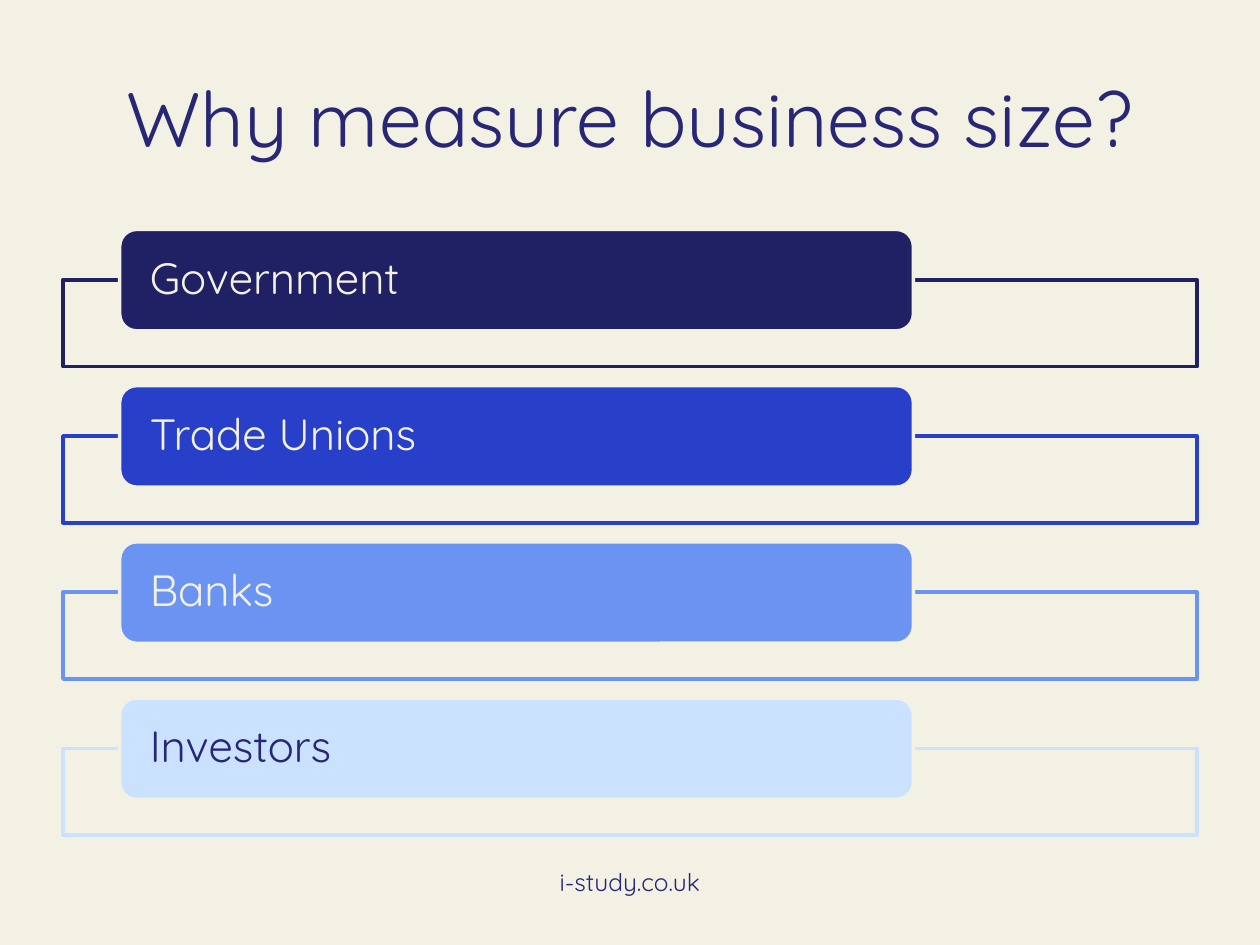
from typing import NamedTuple

from pptx import Presentation
from pptx.dml.color import RGBColor
from pptx.enum import shapes, text
from pptx.util import Pt

CREAM = RGBColor(0xF3, 0xF1, 0xE4)
INDIGO = RGBColor(0x27, 0x27, 0x76)
NAVY = RGBColor(0x20, 0x20, 0x64)
ROYAL = RGBColor(0x27, 0x3F, 0xC9)
CORNFLOWER = RGBColor(0x6B, 0x94, 0xF2)
PALE_BLUE = RGBColor(0xCA, 0xE2, 0xFF)

FONT = "Quicksand"
FIRST_LABEL_TOP = 131.1
ROW_PITCH = 89.26
FRAME_DROP = 28.8


class Reason(NamedTuple):
    name: str
    color: RGBColor
    text_color: RGBColor = CREAM


REASONS = [
    Reason("Government", NAVY),
    Reason("Trade Unions", ROYAL),
    Reason("Banks", CORNFLOWER),
    Reason("Investors", PALE_BLUE, INDIGO),
]


def write(box, words: str, *, size: float, color: RGBColor = INDIGO,
          align=text.PP_ALIGN.CENTER, anchor=text.MSO_ANCHOR.MIDDLE,
          side: float = 7.2, edge: float = 3.6, spacing: float = 1.0) -> None:
    frame = box.text_frame
    frame.word_wrap = True
    frame.vertical_anchor = anchor
    frame.margin_left = frame.margin_right = Pt(side)
    frame.margin_top = frame.margin_bottom = Pt(edge)
    para = frame.paragraphs[0]
    para.alignment = align
    para.line_spacing = spacing
    span = para.add_run()
    span.text = words
    span.font.name = FONT
    span.font.size = Pt(size)
    span.font.color.rgb = color


def add_panel(page, kind, left: float, top: float, width: float, height: float,
              *, fill: RGBColor, line: RGBColor):
    panel = page.shapes.add_shape(kind, Pt(left), Pt(top), Pt(width), Pt(height))
    panel.shadow.inherit = False
    panel.fill.solid()
    panel.fill.fore_color.rgb = fill
    panel.line.color.rgb = line
    panel.line.width = Pt(2)
    return panel


def add_reason(page, reason: Reason, top: float) -> None:
    add_panel(page, shapes.MSO_SHAPE.RECTANGLE, 36, top + FRAME_DROP, 648, 49.6,
              fill=CREAM, line=reason.color)
    label = add_panel(page, shapes.MSO_SHAPE.ROUNDED_RECTANGLE, 68.4, top, 453.6, 58,
                      fill=reason.color, line=CREAM)
    write(label, reason.name, size=25, color=reason.text_color,
          align=text.PP_ALIGN.LEFT, side=14.4, edge=0, spacing=0.9)


def main() -> None:
    deck = Presentation()
    deck.slide_width, deck.slide_height = Pt(720), Pt(540)
    page = deck.slides.add_slide(deck.slide_layouts[6])
    page.background.fill.solid()
    page.background.fill.fore_color.rgb = CREAM

    # Title
    title = page.shapes.add_textbox(Pt(36), Pt(21.6), Pt(648), Pt(90))
    write(title, "Why measure business size?", size=44)

    # Reasons, one framed label per row
    for row, reason in enumerate(REASONS):
        add_reason(page, reason, FIRST_LABEL_TOP + row * ROW_PITCH)

    # Footer
    footer = page.shapes.add_textbox(Pt(246), Pt(491.8), Pt(228), Pt(37.4))
    write(footer, "i-study.co.uk", size=14, anchor=text.MSO_ANCHOR.TOP)

    deck.save("out.pptx")


if __name__ == "__main__":
    main()
